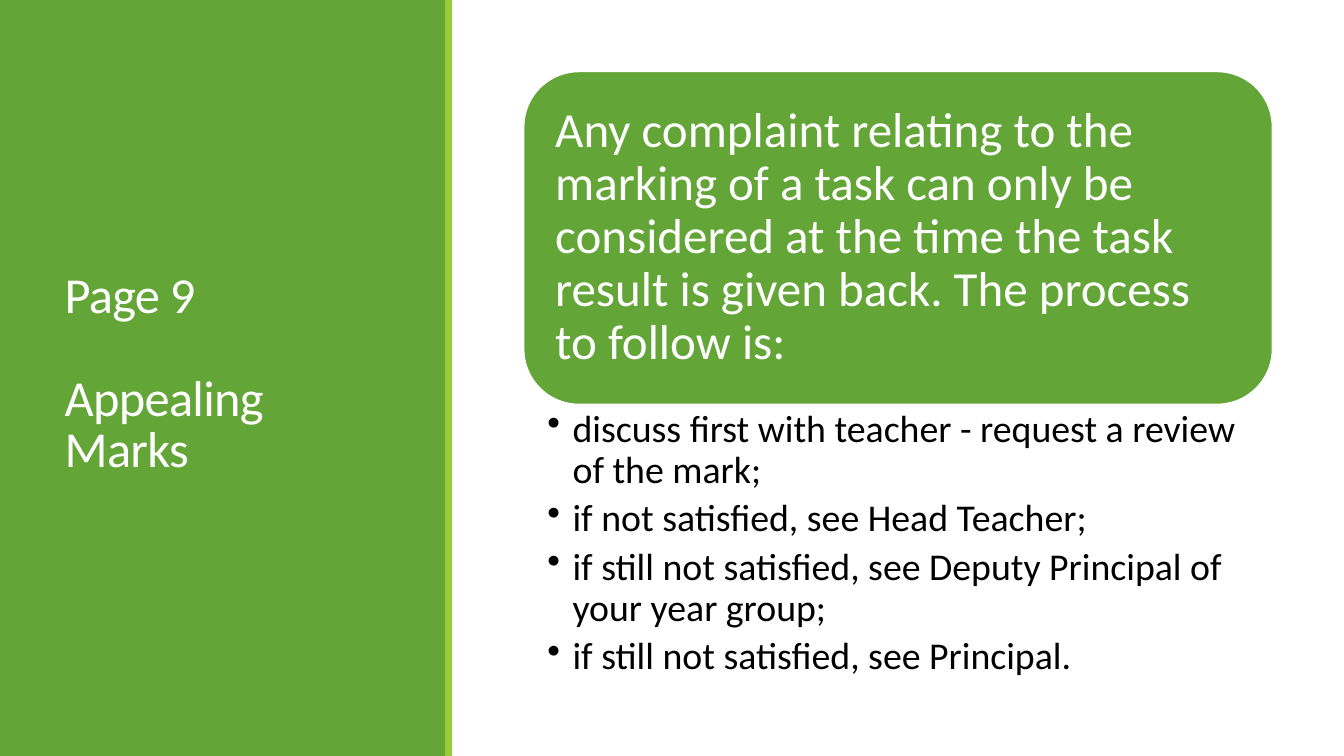
from pptx import Presentation
from pptx.dml.color import RGBColor
from pptx.enum import shapes, text
from pptx.oxml import parse_xml
from pptx.oxml.ns import nsdecls
from pptx.util import Pt

GREEN, LIME, WHITE, BLACK = "63A537", "99CB38", "FFFFFF", "000000"
WIDTH, HEIGHT = 960, 540


def color(hex_value):
    return RGBColor.from_string(hex_value)


class SlideBuilder:
    """Holds the text style and the current slide."""

    font = "Calibri"

    def __init__(self, slide):
        self.slide = slide

    def block(self, box, fill, kind=shapes.MSO_SHAPE.RECTANGLE, outline=None):
        block = self.slide.shapes.add_shape(kind, *map(Pt, box))
        block.shadow.inherit = False
        block.fill.solid()
        block.fill.fore_color.rgb = color(fill)
        if outline:
            block.line.color.rgb = color(outline)
            block.line.width = Pt(1.25)
        else:
            block.line.fill.background()
        return block

    def set_lines(self, frame, lines, size, ink, spacing, insets, anchor):
        frame.text = "\n".join(lines)
        frame.word_wrap = True
        frame.auto_size = text.MSO_AUTO_SIZE.NONE
        frame.vertical_anchor = anchor
        (frame.margin_left, frame.margin_top,
         frame.margin_right, frame.margin_bottom) = map(Pt, insets)
        for paragraph in frame.paragraphs:
            paragraph.alignment = text.PP_ALIGN.LEFT
            paragraph.line_spacing = spacing
            paragraph.space_before = paragraph.space_after = Pt(0)
            for run in paragraph.runs:
                run.font.name = self.font
                run.font.size = Pt(size)
                run.font.color.rgb = color(ink)

    def title(self, box, lines, gap):
        title = self.slide.shapes.title
        title.left, title.top, title.width, title.height = map(Pt, box)
        self.set_lines(title.text_frame, lines, 36, WHITE, 0.85,
                       (7.2, 3.6, 7.2, 3.6), text.MSO_ANCHOR.MIDDLE)
        for paragraph in title.text_frame.paragraphs:
            for run in paragraph.runs:
                run._r.get_or_add_rPr().set("spc", "-50")
        title.text_frame.paragraphs[-1].space_before = Pt(gap)
        # Bring the title in front of the side panel
        self.slide.shapes._spTree.append(title._element)

    def card(self, box, statement):
        card = self.block(box, GREEN, shapes.MSO_SHAPE.ROUNDED_RECTANGLE, WHITE)
        self.set_lines(card.text_frame, [statement], 35, WHITE, 0.9,
                       (11, 11, 11, 11), text.MSO_ANCHOR.MIDDLE)

    def bullets(self, box, steps):
        frame = self.slide.shapes.add_textbox(*map(Pt, box)).text_frame
        self.set_lines(frame, steps, 27, BLACK, 0.9,
                       (17, 3.6, 19, 3.6), text.MSO_ANCHOR.TOP)
        for paragraph in frame.paragraphs:
            paragraph.space_after = Pt(5.5)
            properties = paragraph._p.get_or_add_pPr()
            properties.set("marL", str(Pt(18)))
            properties.set("indent", str(-Pt(18)))
            properties.append(parse_xml(f'<a:buChar {nsdecls("a")} char="•"/>'))


def main():
    deck = Presentation()
    deck.slide_width, deck.slide_height = Pt(WIDTH), Pt(HEIGHT)
    title_only = deck.slide_layouts[5]
    page = SlideBuilder(deck.slides.add_slide(title_only))

    # Side panel with title
    page.block((0, 0, 319, HEIGHT), GREEN)
    page.title((39, 41, 243, 454), ["Page 9", "Appealing Marks"], gap=37)
    page.block((318, 0, 5, HEIGHT), LIME)

    # Complaint rule and the steps to follow
    left, width, split = 374, 535, 289
    page.card((left, 51, width, split - 51),
              "Any complaint relating to the marking of a task can only be "
              "considered at the time the task result is given back. "
              "The process to follow is:")
    page.bullets((left, split, width, 205), [
        "discuss first with teacher - request a review of the mark;",
        "if not satisfied, see Head Teacher;",
        "if still not satisfied, see Deputy Principal of your year group;",
        "if still not satisfied, see Principal.",
    ])

    deck.save("out.pptx")


if __name__ == "__main__":
    main()
